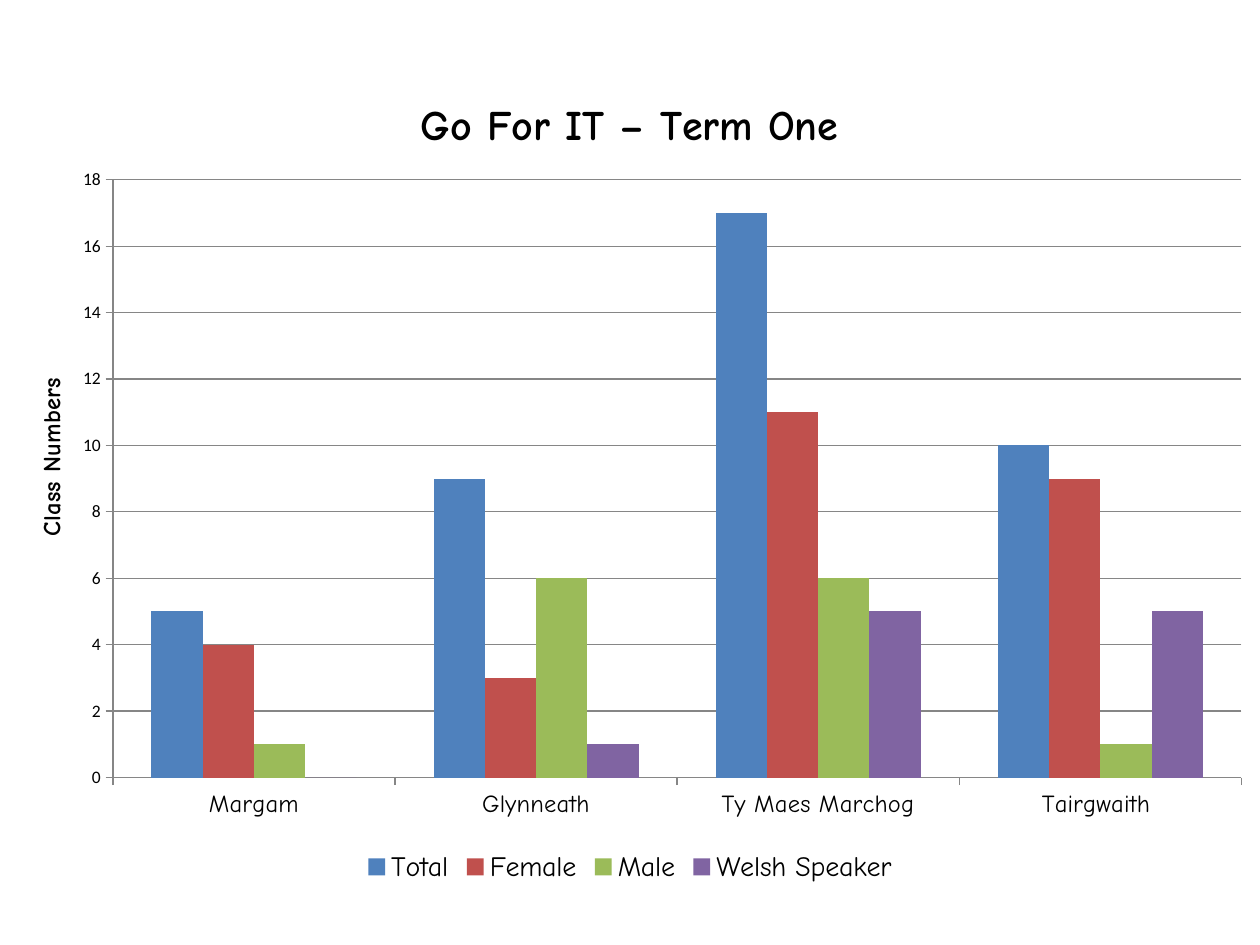
from lxml.etree import SubElement as Sub, Element as Elem
from pptx import Presentation as Deck
from pptx.chart.data import CategoryChartData as Data
from pptx.dml.color import RGBColor as Rgb
from pptx.enum.chart import XL_CHART_TYPE as Kind, XL_LEGEND_POSITION as Side, XL_TICK_MARK as Tick
from pptx.oxml.ns import qn
from pptx.util import Inches, Pt

HUES = {"text": "000000", "line": "868686", "Total": "4F81BD",
        "Female": "C0504D", "Male": "9BBB59", "Welsh Speaker": "8064A2"}
SITES = ["Margam", "Glynneath", "Ty Maes Marchog", "Tairgwaith "]
COUNTS = {"Total": (5, 9, 17, 10), "Female": (4, 3, 11, 9),
          "Male": (1, 6, 6, 1), "Welsh Speaker": (0, 1, 5, 5)}


class Page:
    comic = "Comic Neue"
    plain = "Calibri"

    def __init__(self, deck):
        self.slide = deck.slides.add_slide(deck.slide_layouts[6])

    def font(self, font, size, name, bold=False):
        style = {"size": Pt(size), "name": name, "bold": bold}
        for key, value in style.items():
            setattr(font, key, value)
        font.color.rgb = Rgb.from_string(HUES["text"])

    def line(self, line):
        line.color.rgb = Rgb.from_string(HUES["line"])
        line.width = Pt(0.75)

    def place(self, node, index, inner=False, **spots):
        for old in node.findall(qn("c:layout")):
            node.remove(old)
        layout = Elem(qn("c:layout"))
        node.insert(index, layout)
        manual = Sub(layout, qn("c:manualLayout"))
        if inner:
            Sub(manual, qn("c:layoutTarget")).set("val", "inner")
        for key in spots:
            if key in "xy":
                Sub(manual, qn(f"c:{key}Mode")).set("val", "edge")
        for key, value in spots.items():
            Sub(manual, qn(f"c:{key}")).set("val", str(value))

    def title(self, title, text, size, x, y):
        frame = title.text_frame
        frame.text = text
        self.font(frame.paragraphs[0].runs[0].font, size, self.comic, True)
        node = title._element
        self.place(node, node.index(node.find(qn("c:tx"))) + 1, x=x, y=y)
        node.get_or_add_overlay().set("val", "0") if hasattr(node, "get_or_add_overlay") else None

    def axis(self, axis, size, name):
        style = {"major_tick_mark": Tick.OUTSIDE, "minor_tick_mark": Tick.NONE}
        for key, value in style.items():
            setattr(axis, key, value)
        self.font(axis.tick_labels.font, size, name)
        self.line(axis.format.line)

    def legend(self, chart):
        chart.has_legend = True
        style = {"position": Side.BOTTOM, "include_in_layout": False}
        for key, value in style.items():
            setattr(chart.legend, key, value)
        self.font(chart.legend.font, 16, self.comic)

    def chart(self, box, sites, counts):
        data = Data()
        data.categories = sites
        for name, values in counts.items():
            data.add_series(name, values)
        frame = self.slide.shapes.add_chart(
            Kind.COLUMN_CLUSTERED, *map(Inches, box), data)
        chart = frame.chart
        self.font(chart.font, 10, self.plain)
        chart.has_title = True
        self.title(chart.chart_title, "Go For IT – Term One ", 24, 0.33, 0.04)
        self.axis(chart.category_axis, 14, self.comic)
        scale = chart.value_axis
        self.axis(scale, 10, self.plain)
        limits = {"minimum_scale": 0, "maximum_scale": 18, "major_unit": 2,
                  "has_major_gridlines": True, "has_title": True}
        for key, value in limits.items():
            setattr(scale, key, value)
        self.line(scale.major_gridlines.format.line)
        self.title(scale.axis_title, "Class Numbers ", 14, 0.03, 0.37)
        self.legend(chart)
        plot = chart.plots[0]
        for key, value in {"gap_width": 150, "overlap": 0, "vary_by_categories": False}.items():
            setattr(plot, key, value)
        for bars in plot.series:
            bars.format.fill.solid()
            bars.format.fill.fore_color.rgb = Rgb.from_string(HUES[bars.name])
            bars.invert_if_negative = False
        area = chart._chartSpace.chart.plotArea
        self.place(area, 0, True, x=0.0945, y=0.148, w=0.885, h=0.719)


def main():
    deck = Deck()
    deck.slide_width, deck.slide_height = Inches(10), Inches(7.5)
    Page(deck).chart((-0.06, 0.45, 10.12, 6.6), SITES, COUNTS)
    deck.save("out.pptx")


if __name__ == "__main__":
    main()
